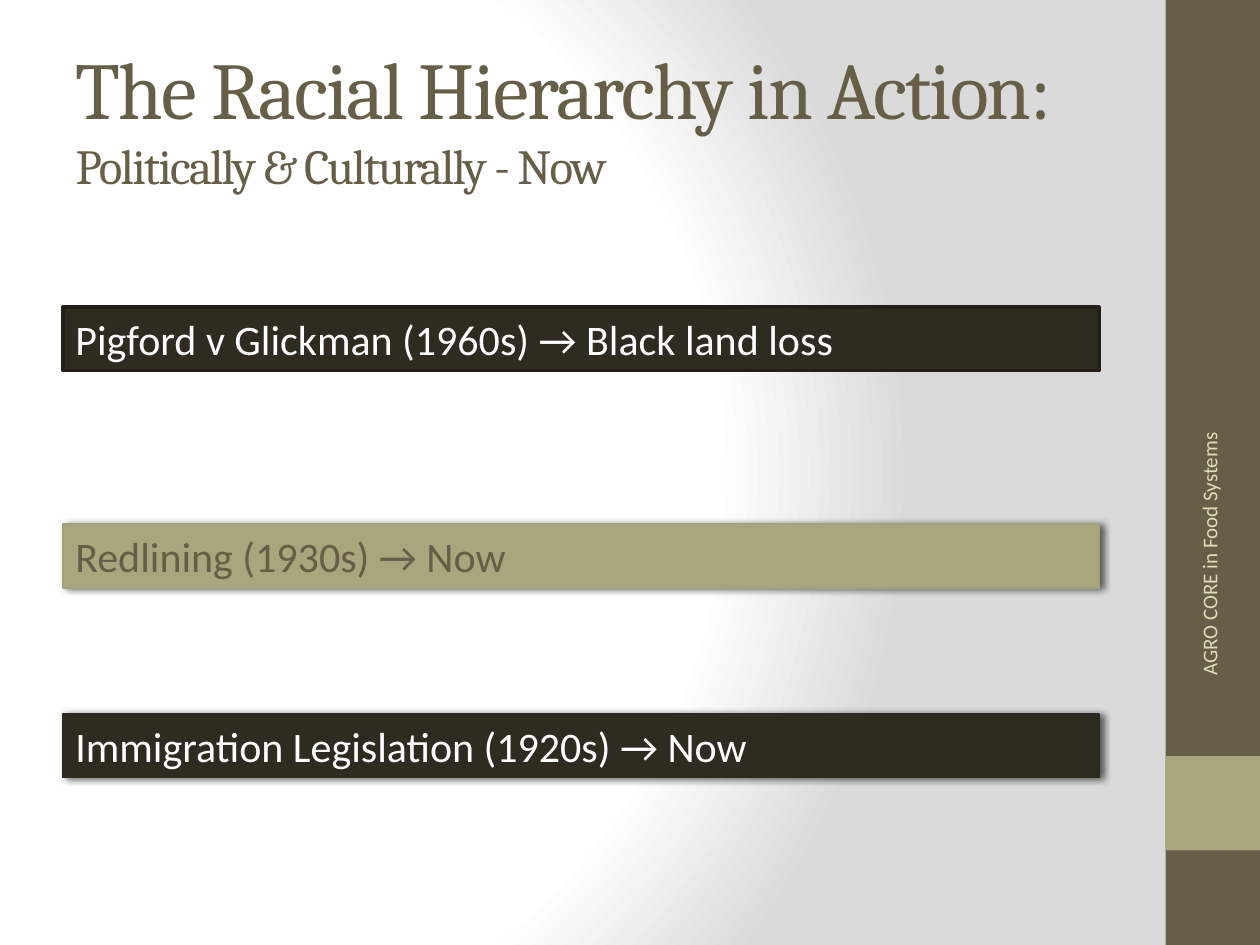
from lxml.etree import SubElement as Sub
from pptx import Presentation
from pptx.dml.color import RGBColor as RGB
from pptx.enum.shapes import MSO_SHAPE as Shape
from pptx.enum.text import MSO_ANCHOR as Anchor, MSO_AUTO_SIZE as Fit, PP_ALIGN as Align
from pptx.oxml.ns import qn
from pptx.util import Pt

OLIVE, SAGE, DARK, CREAM = "675E47", "A9A57C", "2F2B20", "DFDCB7"


def color(code):
    return RGB.from_string(code)


def write(par, text, font="Calibri", size=24, ink="FFFFFF", align=Align.LEFT, track=0):
    par.alignment = align
    run = par.add_run()
    run.text = text
    face = run.font
    face.name, face.size = font, Pt(size)
    face.color.rgb = color(ink)
    if track:
        run._r.get_or_add_rPr().set("spc", str(track))


class Page:
    serif = "Cambria"

    def __init__(self, deck):
        self.slide = deck.slides.add_slide(deck.slide_layouts[5])

    def back(self, stops):
        """Radial gradient background."""
        fill = self.slide.background.fill
        fill.gradient()
        grad = self.slide.background._cSld.find(".//" + qn("a:gradFill"))
        for part in list(grad):
            grad.remove(part)
        group = Sub(grad, qn("a:gsLst"))
        for pos, code in stops:
            stop = Sub(group, qn("a:gs"), pos=str(pos * 1000))
            Sub(stop, qn("a:srgbClr"), val=code)
        ring = Sub(grad, qn("a:path"), path="circle")
        Sub(ring, qn("a:fillToRect"), l="20000", t="50000", r="100000", b="50000")

    def rect(self, x, y, w, h, fill):
        box = self.slide.shapes.add_shape(Shape.RECTANGLE, Pt(x), Pt(y), Pt(w), Pt(h))
        box.shadow.inherit = False
        box.fill.solid()
        box.fill.fore_color.rgb = color(fill)
        box.line.fill.background()
        return box

    def title(self, x, y, w, h, head, sub):
        box = self.slide.shapes.title
        box.left, box.top, box.width, box.height = Pt(x), Pt(y), Pt(w), Pt(h)
        frame = box.text_frame
        frame.auto_size, frame.vertical_anchor = Fit.NONE, Anchor.MIDDLE
        par = frame.paragraphs[0]
        style = dict(font=self.serif, ink=OLIVE, track=-100)
        write(par, head, size=46, **style)
        par.add_line_break()
        write(par, sub, size=28, **style)

    def side(self, x, y, w, h, text):
        """Text that reads upward."""
        box = self.slide.shapes.add_textbox(Pt(x), Pt(y), Pt(w), Pt(h))
        box.rotation = 270
        frame = box.text_frame
        frame.word_wrap, frame.vertical_anchor = True, Anchor.MIDDLE
        write(frame.paragraphs[0], text, size=12, ink=CREAM, align=Align.RIGHT)

    def bar(self, y, text, fill, edge, ink="FFFFFF", width=1, shade=True):
        box = self.rect(36, y, 592, 36.35, fill)
        box.line.color.rgb, box.line.width = color(edge), Pt(width)
        frame = box.text_frame
        frame.word_wrap, frame.auto_size = True, Fit.SHAPE_TO_FIT_TEXT
        frame.vertical_anchor = Anchor.TOP
        write(frame.paragraphs[0], text, ink=ink)
        if shade:
            self.shade(box)

    def shade(self, box):
        """Soft shadow to the right."""
        glow = box._element.spPr.find(qn("a:effectLst"))
        drop = Sub(glow, qn("a:outerShdw"), blurRad=str(Pt(4)), dist=str(Pt(2)),
                   dir="0", algn="ctr", rotWithShape="0")
        tint = Sub(drop, qn("a:srgbClr"), val="000000")
        Sub(tint, qn("a:alpha"), val="60000")


def main():
    deck = Presentation()
    deck.slide_width, deck.slide_height = Pt(720), Pt(540)
    page = Page(deck)

    # Background and side band
    page.back([(0, "FFFFFF"), (75, "FFFFFF"), (100, "DADADA")])
    page.rect(666, 0, 54, 540, OLIVE)
    page.rect(666, 432, 54, 54, SAGE)
    page.side(597.6, 319, 186.5, 28.8, "AGRO CORE in Food Systems")

    # Title
    page.title(36, 21.6, 600, 90, "The Racial Hierarchy in Action:",
               "Politically & Culturally - Now")

    # Topic bars
    page.bar(175.5, "Pigford v Glickman (1960s) → Black land loss", DARK, "232018",
             width=2, shade=False)
    page.bar(299.5, "Redlining (1930s) → Now", SAGE, "A6A278", ink=OLIVE)
    page.bar(408, "Immigration Legislation (1920s) → Now", DARK, "2E2A1F")

    deck.save("out.pptx")


if __name__ == "__main__":
    main()
